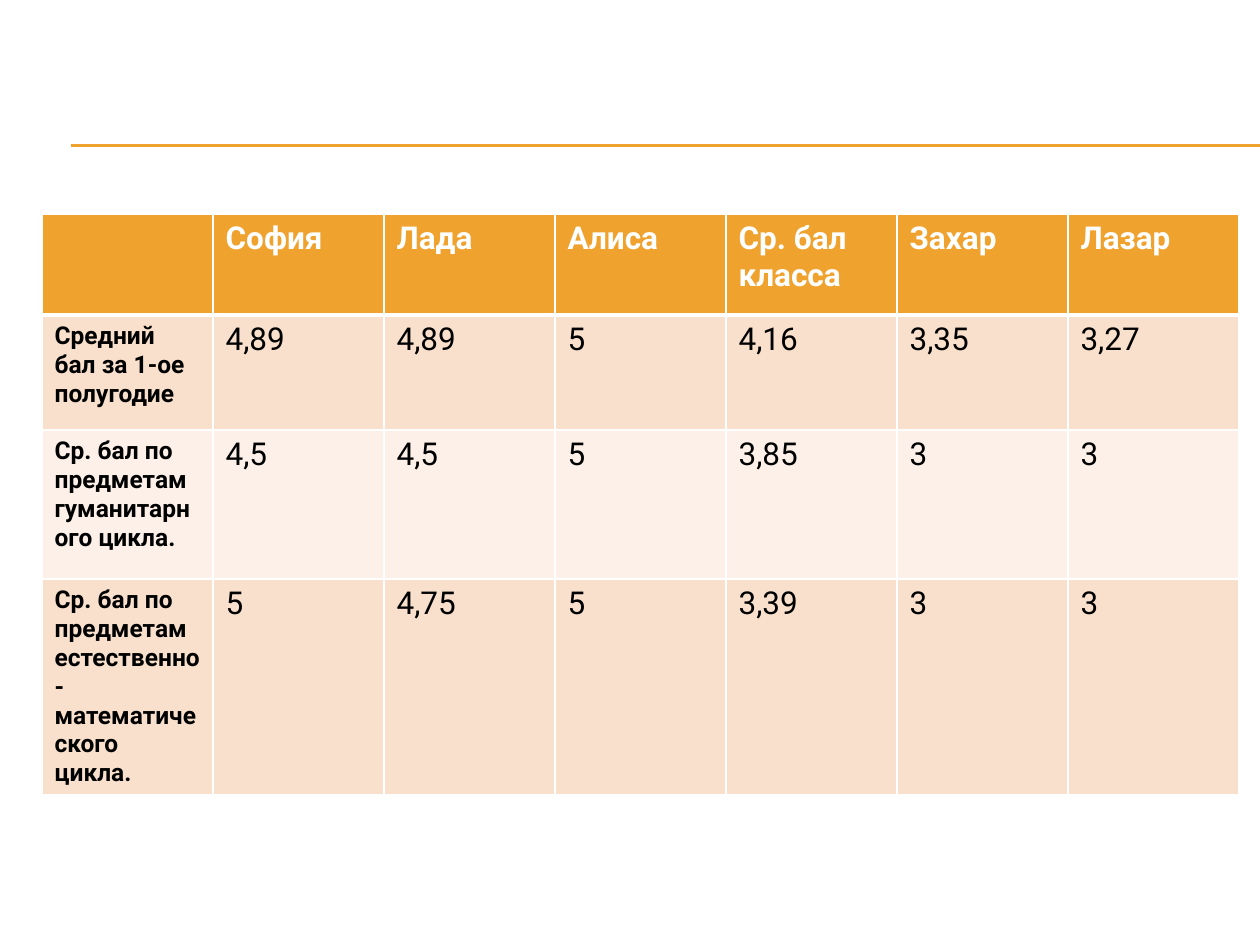
from dataclasses import dataclass

from pptx import Presentation
from pptx import util as u
from pptx.dml.color import RGBColor
from pptx.enum import shapes, text
from pptx.oxml import parse_xml
from pptx.oxml.ns import nsdecls

PX_PER_INCH = 126
FONT = "Roboto"
ORANGE = RGBColor(0xF0, 0xA2, 0x2E)
PEACH = RGBColor(0xF9, 0xE0, 0xCD)
CREAM = RGBColor(0xFC, 0xF0, 0xE8)
WHITE = RGBColor(0xFF, 0xFF, 0xFF)
BLACK = RGBColor(0, 0, 0)

TABLE_LEFT, TABLE_TOP = 42, 214
COLUMN_WIDTH = 171
RULE_LEFT, RULE_RIGHT = 71, 1260
RULE_TOPS = (145, 146)


@dataclass(frozen=True)
class GradeRow:
    height: int
    fill: RGBColor
    label: str
    values: tuple[str, ...]
    header: bool = False


ROWS = (
    GradeRow(101, ORANGE, "",
             ("София", "Лада", "Алиса", "Ср. бал класса", "Захар", "Лазар"), header=True),
    GradeRow(115, PEACH, "Средний бал за 1-ое полугодие",
             ("4,89", "4,89", "5", "4,16", "3,35", "3,27")),
    GradeRow(149, CREAM, "Ср. бал по предметам гуманитарного цикла.",
             ("4,5", "4,5", "5", "3,85", "3", "3")),
    GradeRow(216, PEACH, "Ср. бал по предметам естественно-математического цикла.",
             ("5", "4,75", "5", "3,39", "3", "3")),
)


def px(length: int) -> u.Emu:
    return u.Emu(round(length * u.Inches(1) / PX_PER_INCH))


def draw_rule(slide, top: int) -> None:
    rule = slide.shapes.add_connector(
        shapes.MSO_CONNECTOR.STRAIGHT, px(RULE_LEFT), px(top), px(RULE_RIGHT), px(top))
    rule.line.color.rgb = ORANGE
    rule.line.width = u.Pt(0.75)
    rule._element.spPr.append(parse_xml(f"<a:effectLst {nsdecls('a')}/>"))


def set_borders(cell, widths: dict[str, int]) -> None:
    properties = cell._tc.get_or_add_tcPr()
    for index, (side, width) in enumerate(widths.items()):
        properties.insert(index, parse_xml(
            f'<a:{side} {nsdecls("a")} w="{u.Pt(width)}"><a:solidFill>'
            f'<a:srgbClr val="{WHITE}"/></a:solidFill></a:{side}>'))


def fill_cell(cell, words: str, row: GradeRow, is_label: bool, top_border: int) -> None:
    cell.fill.solid()
    cell.fill.fore_color.rgb = row.fill
    cell.vertical_anchor = text.MSO_ANCHOR.TOP
    set_borders(cell, {"lnL": 1, "lnR": 1, "lnT": top_border, "lnB": 3 if row.header else 1})
    cell.text = words
    font = cell.text_frame.paragraphs[0].font
    if words:
        font = cell.text_frame.paragraphs[0].runs[0].font
    font_format = {
        "name": FONT,
        "size": u.Pt(14 if is_label else 18),
        "bold": row.header or is_label,
    }
    for name, value in font_format.items():
        setattr(font, name, value)
    font.color.rgb = WHITE if row.header else BLACK


def draw_grades(slide, rows: tuple[GradeRow, ...]) -> None:
    column_count = len(rows[0].values) + 1
    table = slide.shapes.add_table(
        len(rows), column_count, px(TABLE_LEFT), px(TABLE_TOP),
        px(COLUMN_WIDTH * column_count), px(sum(row.height for row in rows))).table
    for column in table.columns:
        column.width = px(COLUMN_WIDTH)
    for row_index, row in enumerate(rows):
        table.rows[row_index].height = px(row.height)
        top_border = 3 if row_index and rows[row_index - 1].header else 1
        for column_index, words in enumerate((row.label, *row.values)):
            fill_cell(table.cell(row_index, column_index), words, row,
                      column_index == 0, top_border)


def main() -> None:
    presentation = Presentation()
    presentation.slide_width, presentation.slide_height = px(1260), px(945)
    slide = presentation.slides.add_slide(presentation.slide_layouts[6])
    for top in RULE_TOPS:
        draw_rule(slide, top)
    draw_grades(slide, ROWS)
    presentation.save("out.pptx")


if __name__ == "__main__":
    main()
